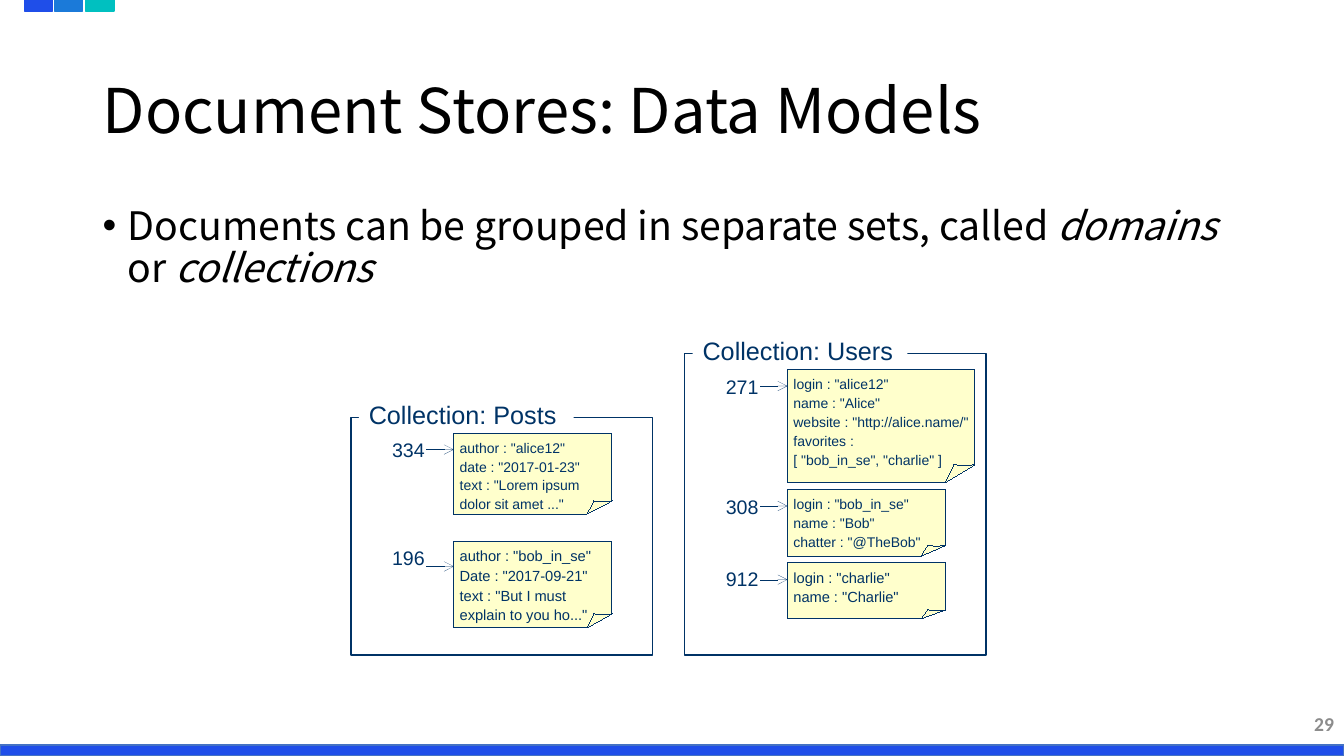
"""Build a slide on the data models of document stores."""
from dataclasses import dataclass

from lxml import etree
from pptx import Presentation
from pptx import util as u
from pptx.dml.color import RGBColor
from pptx.enum import shapes, text
from pptx.oxml import ns

PX = 9144
NAVY, PAPER, WHITE, BLACK = "003366", "FFFFCC", "FFFFFF", "000000"
TITLE_FONT, DIAGRAM_FONT, NUMBER_FONT = "Noto Sans CJK KR", "Arial", "Calibri"
NOTE_LEFT_IN_FRAME, LABEL_WIDTH, ARROW_LENGTH = 102, 71, 27


@dataclass(frozen=True)
class Box:
    left: int
    top: int
    width: int
    height: int

    def emu(self) -> tuple[int, ...]:
        """Return the box in EMU."""
        return tuple(px(v) for v in (self.left, self.top, self.width, self.height))


@dataclass(frozen=True)
class Band:
    box: Box
    fill: str
    line: str


@dataclass(frozen=True)
class Style:
    font: str
    size: float
    color: str
    bold: bool = False


@dataclass(frozen=True)
class Document:
    key: str
    top: int
    width: int
    height: int
    size: float
    lines: tuple[str, ...]
    arrow_drop: int = 16


@dataclass(frozen=True)
class Collection:
    name: str
    left: int
    top: int
    documents: tuple[Document, ...]


BANDS = (
    Band(Box(0, 739, 1333, 11), "1F4EE9", "4472C4"),
    Band(Box(24, 0, 28, 11), "1F4EE9", "1F4EE9"),
    Band(Box(54, 0, 28, 11), "1B7AD9", "1B7AD9"),
    Band(Box(85, 0, 28, 11), "00C0C0", "00C0C0"),
)
FRAME_WIDTH, FRAME_BOTTOM = 299, 650
COLLECTIONS = (
    Collection("Users", 679, 351, (
        Document("271", 367, 186, 112, 10, (
            'login : "alice12"', 'name : "Alice"',
            'website : "http://alice.name/"', "favorites :",
            '[ "bob_in_se", "charlie" ]')),
        Document("308", 486, 157, 66, 10, (
            'login : "bob_in_se"', 'name : "Bob"', 'chatter : "@TheBob"')),
        Document("912", 558, 157, 56, 10.5, (
            'login : "charlie"', 'name : "Charlie"'), 17),
    )),
    Collection("Posts", 348, 414, (
        Document("334", 430, 157, 80, 10, (
            'author : "alice12"', 'date : "2017-01-23"',
            'text : "Lorem ipsum', 'dolor sit amet ..."')),
        Document("196", 537, 157, 86, 10.5, (
            'author : "bob_in_se"', 'Date : "2017-09-21"',
            'text : "But I must', 'explain to you ho..."'), 25),
    )),
)


def px(length: float) -> int:
    """Turn px into EMU."""
    return round(length * PX)


def rgb(color: str) -> RGBColor:
    """Turn a hex string into a colour."""
    return RGBColor.from_string(color)


def draw_line(line, color: str, width: float) -> None:
    """Set the colour and width of a line, writing a zero width too."""
    line.color.rgb = rgb(color)
    line._get_or_add_ln().set("w", str(u.Pt(width)))


def paint(shape, fill: str | None, line: str | None, width: float = 1) -> None:
    """Set the fill and line of a shape and drop its shadow."""
    shape.shadow.inherit = False
    if fill:
        shape.fill.solid()
        shape.fill.fore_color.rgb = rgb(fill)
    else:
        shape.fill.background()
    if line:
        draw_line(shape.line, line, width)
    else:
        shape.line.fill.background()


def add_run(paragraph, words: str, style: Style, italic: bool = False) -> None:
    """Append one styled run."""
    run = paragraph.add_run()
    run.text = words
    run.font.name = style.font
    run.font.size = u.Pt(style.size)
    run.font.color.rgb = rgb(style.color)
    run.font.bold = style.bold
    run.font.italic = italic


def prepare_frame(shape, insets: tuple[int, ...] = (10, 5, 10, 5),
                  anchor=text.MSO_ANCHOR.TOP):
    """Set wrapping, insets and anchor, and return the first paragraph."""
    frame = shape.text_frame
    frame.word_wrap = True
    frame.vertical_anchor = anchor
    (frame.margin_left, frame.margin_top,
     frame.margin_right, frame.margin_bottom) = map(px, insets)
    paragraph = frame.paragraphs[0]
    paragraph.alignment = text.PP_ALIGN.LEFT
    return paragraph


def add_rectangle(parent, box: Box, fill: str | None, line: str | None):
    """Add a painted rectangle."""
    shape = parent.add_shape(shapes.MSO_SHAPE.RECTANGLE, *box.emu())
    paint(shape, fill, line)
    return shape


def add_outline(parent, points: list[tuple[float, float]]):
    """Add a closed paper-coloured outline with a hairline."""
    builder = parent.build_freeform(*points[0], scale=PX)
    builder.add_line_segments(points[1:], close=True)
    shape = builder.convert_to_shape()
    paint(shape, PAPER, NAVY, 0)
    return shape


def add_arrow(parent, left: int, right: int, y: int) -> None:
    """Add a horizontal hairline with an open arrowhead."""
    arrow = parent.add_connector(shapes.MSO_CONNECTOR.STRAIGHT,
                                 px(left), px(y), px(right), px(y))
    draw_line(arrow.line, NAVY, 0)
    etree.SubElement(arrow.line._get_or_add_ln(), ns.qn("a:tailEnd"), type="arrow")
    etree.SubElement(arrow._element.spPr, ns.qn("a:effectLst"))


def add_document(slide, document: Document, left: int) -> None:
    """Add a note with a folded corner, its key and its arrow."""
    parent = slide.shapes.add_group_shape().shapes
    top, right = document.top, left + document.width
    bottom = top + document.height
    fold_x, fold_y = left + 0.84 * document.width, top + 0.84 * document.height
    tip_x = left + 0.885 * document.width
    note = add_outline(parent, [(left, top), (right, top), (right, fold_y),
                                (fold_x, bottom), (left, bottom)])
    add_outline(parent, [(fold_x, bottom), (tip_x, fold_y),
                         ((tip_x + right) / 2, fold_y + 1), (right, fold_y)])
    paragraph = prepare_frame(note, (6, 6, 0, 6))
    style = Style(DIAGRAM_FONT, document.size, NAVY)
    for index, line in enumerate(document.lines):
        if index:
            paragraph = note.text_frame.add_paragraph()
            paragraph.alignment = text.PP_ALIGN.LEFT
            paragraph.space_before = u.Pt(1.4)
        add_run(paragraph, line, style)
    label = parent.add_textbox(*Box(left - LABEL_WIDTH, top, LABEL_WIDTH, 44).emu())
    add_run(prepare_frame(label), document.key, Style(DIAGRAM_FONT, 14, NAVY))
    add_arrow(parent, left - ARROW_LENGTH, left, top + document.arrow_drop)


def add_collection(slide, collection: Collection) -> None:
    """Add the documents, frame and caption of a collection."""
    left, top = collection.left, collection.top
    for document in collection.documents:
        add_document(slide, document, left + NOTE_LEFT_IN_FRAME)
    add_rectangle(slide.shapes, Box(left, top, FRAME_WIDTH, FRAME_BOTTOM - top), None, NAVY)
    caption = add_rectangle(slide.shapes, Box(left + 8, top - 23, 213, 38), WHITE, None)
    add_run(prepare_frame(caption), f"Collection: {collection.name}",
            Style(DIAGRAM_FONT, 18, NAVY))


def add_texts(slide) -> None:
    """Add the title, the bullet and the slide number."""
    title = slide.shapes.add_textbox(*Box(92, 40, 1150, 145).emu())
    paragraph = prepare_frame(title, anchor=text.MSO_ANCHOR.MIDDLE)
    paragraph.line_spacing = 0.9
    add_run(paragraph, "Document Stores: Data Models", Style(TITLE_FONT, 44, BLACK))

    body = slide.shapes.add_textbox(*Box(92, 200, 1150, 138).emu())
    paragraph = prepare_frame(body)
    paragraph.line_spacing = 0.9
    properties = paragraph._p.get_or_add_pPr()
    properties.set("marL", str(px(25)))
    properties.set("indent", str(px(-25)))
    etree.SubElement(properties, ns.qn("a:buFont"), typeface=DIAGRAM_FONT)
    etree.SubElement(properties, ns.qn("a:buChar"), char="•")
    for words, italic in (("Documents can be grouped in separate sets, called ", False),
                          ("domains ", True), ("or ", False), ("collections", True)):
        add_run(paragraph, words, Style(TITLE_FONT, 28, BLACK), italic)

    number = slide.shapes.add_textbox(*Box(1033, 698, 300, 40).emu())
    paragraph = prepare_frame(number, anchor=text.MSO_ANCHOR.MIDDLE)
    paragraph.alignment = text.PP_ALIGN.RIGHT
    add_run(paragraph, "29", Style(NUMBER_FONT, 14, "8C8C8C", True))


def main() -> None:
    """Build and save the presentation."""
    presentation = Presentation()
    presentation.slide_width, presentation.slide_height = px(1333), px(750)
    slide = presentation.slides.add_slide(presentation.slide_layouts[6])
    for band in BANDS:
        add_rectangle(slide.shapes, band.box, band.fill, band.line)
    add_texts(slide)
    for collection in COLLECTIONS:
        add_collection(slide, collection)
    presentation.save("out.pptx")


if __name__ == "__main__":
    main()
